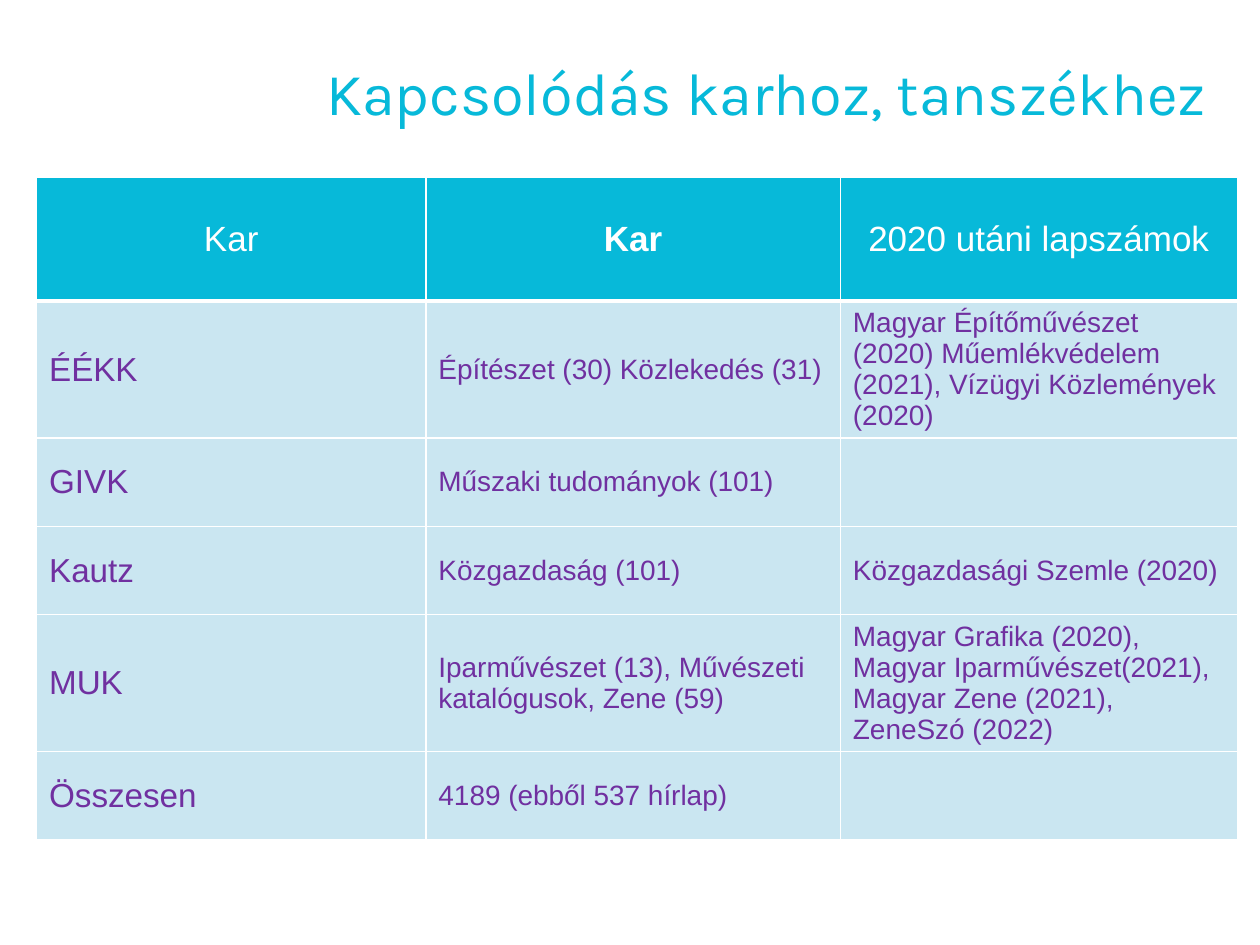
"""Build the slide on journals by faculty: a title and one table."""
from dataclasses import dataclass

from lxml.etree import SubElement as Sub
from pptx import Presentation
from pptx.dml.color import RGBColor as RGB
from pptx.enum.text import MSO_ANCHOR as Anchor, PP_ALIGN as Align
from pptx.oxml.ns import qn
from pptx.util import Inches, Pt


@dataclass(frozen=True)
class Theme:
    accent: str = "07B9D9"
    band: str = "CAE6F1"
    text: str = "7030A0"
    white: str = "FFFFFF"
    title_font: str = "Karla"
    body_font: str = "Arial"
    title_size: int = 34
    header_size: int = 20
    faculty_size: int = 19
    body_size: int = 16


THEME = Theme()
COLUMNS = [3.09, 3.29, 3.15]
HEADER = ["Kar", "Kar", "2020 utáni lapszámok"]
BOLD_HEADER = 1
ROWS = [
    ["ÉÉKK", "Építészet (30) Közlekedés (31)",
     "Magyar Építőművészet (2020) Műemlékvédelem (2021), Vízügyi Közlemények (2020)"],
    ["GIVK", "Műszaki tudományok (101)", ""],
    ["Kautz", "Közgazdaság (101)", "Közgazdasági Szemle (2020)"],
    ["MUK", "Iparművészet (13), Művészeti katalógusok, Zene (59)",
     "Magyar Grafika (2020), Magyar Iparművészet(2021), Magyar Zene (2021), ZeneSzó (2022)"],
    ["Összesen", "4189 (ebből 537 hírlap)", ""],
]


def add_run(p, text, font, size, color, bold=False):
    r = p.add_run()
    r.text = text
    r.font.name = font
    r.font.size = Pt(size)
    r.font.bold = bold
    r.font.color.rgb = RGB.from_string(color)


def set_borders(cell, bottom):
    tc_pr = cell._tc.get_or_add_tcPr()
    for side, width in (("L", 1), ("R", 1), ("T", 1), ("B", bottom)):
        ln = Sub(tc_pr, qn(f"a:ln{side}"), w=str(Pt(width)))
        fill = Sub(ln, qn("a:solidFill"))
        Sub(fill, qn("a:srgbClr"), val=THEME.white)


def fill_cell(cell, text, fill, size, color, align=Align.LEFT, bold=False, bottom=1):
    set_borders(cell, bottom)
    cell.fill.solid()
    cell.fill.fore_color.rgb = RGB.from_string(fill)
    cell.vertical_anchor = Anchor.MIDDLE
    p = cell.text_frame.paragraphs[0]
    p.alignment = align
    if text:
        add_run(p, text, THEME.body_font, size, color, bold)


def add_title(s, text):
    tf = s.shapes.add_textbox(Inches(2.49), Inches(0.46), Inches(7.32), Inches(0.64)).text_frame
    tf.word_wrap = True
    p = tf.paragraphs[0]
    p.line_spacing = 0.9
    add_run(p, text, THEME.title_font, THEME.title_size, THEME.accent)


def add_faculty_table(s):
    height = Inches(5.13)
    frame = s.shapes.add_table(len(ROWS) + 1, len(COLUMNS), Inches(0.29), Inches(1.41),
                               Inches(sum(COLUMNS)), height)
    table = frame.table
    for column, width in zip(table.columns, COLUMNS):
        column.width = Inches(width)
    for i, row in enumerate(table.rows):
        row.height = Inches(0.7 if i else 0.98)
    frame.height = height
    for j, text in enumerate(HEADER):
        fill_cell(table.cell(0, j), text, THEME.accent, THEME.header_size, THEME.white,
                  Align.CENTER, j == BOLD_HEADER, 3)
    for i, row in enumerate(ROWS, 1):
        for j, text in enumerate(row):
            size = THEME.body_size if j else THEME.faculty_size
            fill_cell(table.cell(i, j), text, THEME.band, size, THEME.text,
                      bottom=1)
    for j in range(len(COLUMNS)):
        top = table.cell(1, j)._tc.tcPr.find(qn("a:lnT"))
        top.set("w", str(Pt(3)))


def main():
    prs = Presentation()
    prs.slide_width, prs.slide_height = Inches(10), Inches(7.5)
    s = prs.slides.add_slide(prs.slide_layouts[6])
    add_faculty_table(s)
    add_title(s, "Kapcsolódás karhoz, tanszékhez")
    prs.save("out.pptx")


if __name__ == "__main__":
    main()
